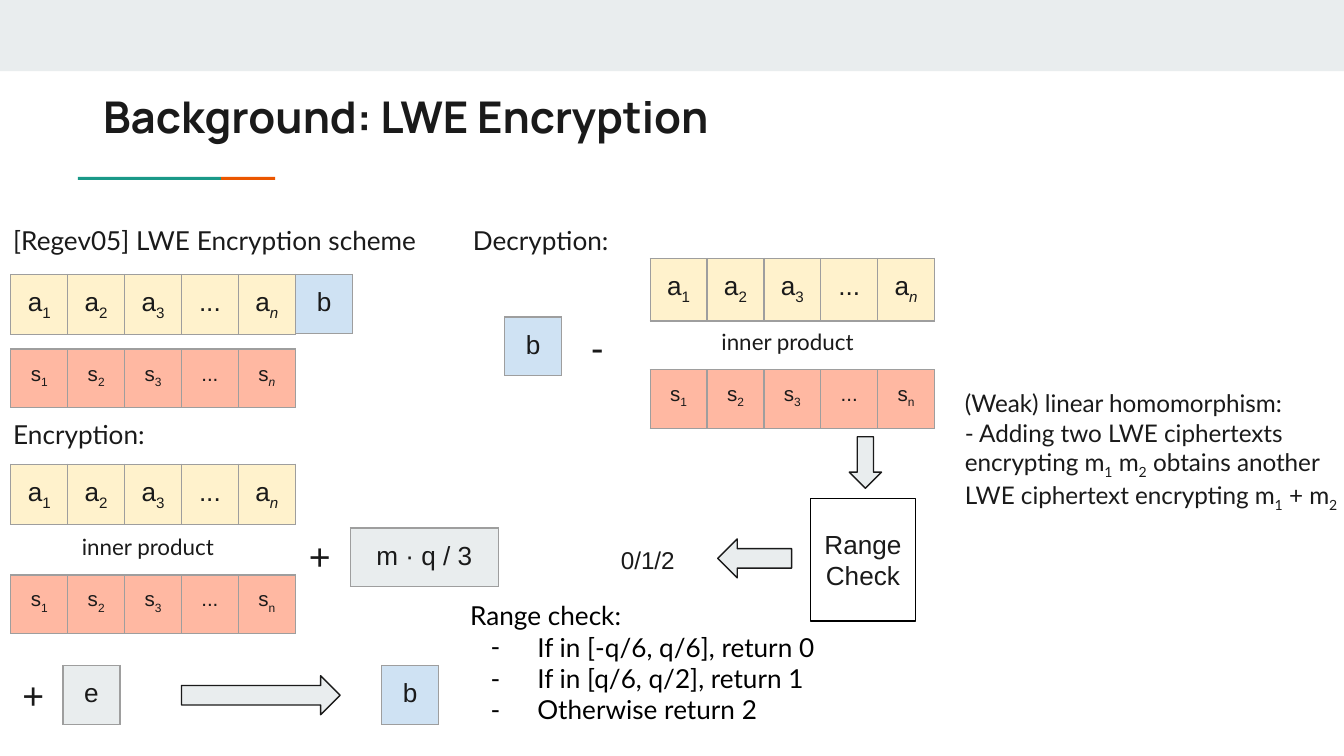
from typing import NamedTuple

from lxml.etree import SubElement
from pptx import Presentation
from pptx.dml.color import RGBColor
from pptx.enum.shapes import MSO_SHAPE as Kind
from pptx.enum.text import MSO_ANCHOR as Anchor, PP_ALIGN as Align
from pptx.oxml.ns import qn
from pptx.util import Pt

INK, GREY, EDGE = "1A1A1A", "E9EDEE", "9E9E9E"
CREAM, ROSE, BLUE = "FFF2CC", "FFB8A2", "CFE2F3"
CELL, INSET = 30.5, 7.2


class Grid(NamedTuple):
    left: float
    top: float
    words: list[str]
    fill: str
    size: float = 14
    slant: bool = False
    width: float = CELL
    height: float = 31.5


class Note(NamedTuple):
    left: float
    top: float
    width: float
    height: float
    lines: list[str]
    size: float = 14
    font: str = "Lato"
    ink: str = INK
    bold: bool = False


class Form(NamedTuple):
    kind: Kind
    left: float
    top: float
    width: float
    height: float
    fill: str = ""
    line: str = ""
    lines: tuple[str, ...] = ()
    size: float = 14


def tint(code: str) -> RGBColor:
    return RGBColor.from_string(code)


def write(para, text: str, size: float, font: str, ink: str,
          bold: bool = False, slant: bool = False) -> None:
    """Fill a paragraph, lowering every second part between underscores."""
    head, *rest = text.split("_")
    para.text = head
    for part in rest:
        para.add_run().text = part
    for i, run in enumerate(para.runs):
        run.font.size = Pt(size)
        run.font.name = font
        run.font.bold = bold
        run.font.color.rgb = tint(ink)
        if i % 2:
            run.font._element.set("baseline", "-25000")
            run.font.italic = slant and run.text == "n"


def pad(frame) -> None:
    frame.word_wrap = True
    frame.margin_left = frame.margin_right = Pt(INSET)
    frame.margin_top = frame.margin_bottom = Pt(INSET)


def frame_cell(cell) -> None:
    props = cell._tc.get_or_add_tcPr()
    for i, side in enumerate(("lnL", "lnR", "lnT", "lnB")):
        line = props.makeelement(qn(f"a:{side}"), {"w": str(Pt(0.75))})
        fill = SubElement(line, qn("a:solidFill"))
        SubElement(fill, qn("a:srgbClr"), val=EDGE)
        props.insert(i, line)


def add_grid(slide, grid: Grid) -> None:
    count = len(grid.words)
    table = slide.shapes.add_table(
        1, count, Pt(grid.left), Pt(grid.top),
        Pt(grid.width * count), Pt(grid.height)).table
    table.first_row = table.horz_banding = False
    for i, word in enumerate(grid.words):
        table.columns[i].width = Pt(grid.width)
        cell = table.cell(0, i)
        cell.fill.solid()
        cell.fill.fore_color.rgb = tint(grid.fill)
        cell.margin_left = cell.margin_right = Pt(INSET)
        cell.margin_top = cell.margin_bottom = Pt(INSET)
        para = cell.text_frame.paragraphs[0]
        para.alignment = Align.CENTER
        write(para, word, grid.size, "Arial", INK, slant=grid.slant)
        frame_cell(cell)


def add_note(slide, note: Note) -> None:
    box = slide.shapes.add_textbox(
        Pt(note.left), Pt(note.top), Pt(note.width), Pt(note.height))
    frame = box.text_frame
    pad(frame)
    frame.text = "\n".join(note.lines)
    for para, line in zip(frame.paragraphs, note.lines):
        dash = line.startswith("• ")
        write(para, line.removeprefix("• "), note.size, note.font,
              note.ink, note.bold)
        if dash:
            props = para._p.get_or_add_pPr()
            props.set("marL", str(Pt(36)))
            props.set("indent", str(Pt(-25)))
            SubElement(props, qn("a:buFont"), typeface="Lato")
            SubElement(props, qn("a:buChar"), char="-")


def add_form(slide, form: Form) -> None:
    shape = slide.shapes.add_shape(
        form.kind, Pt(form.left), Pt(form.top), Pt(form.width), Pt(form.height))
    shape.shadow.inherit = False
    if form.fill:
        shape.fill.solid()
        shape.fill.fore_color.rgb = tint(form.fill)
    else:
        shape.fill.background()
    if form.line:
        shape.line.color.rgb = tint(form.line)
        shape.line.width = Pt(0.75)
    else:
        shape.line.fill.background()
    if form.lines:
        frame = shape.text_frame
        pad(frame)
        frame.vertical_anchor = Anchor.MIDDLE
        frame.text = "\n".join(form.lines)
        for para, line in zip(frame.paragraphs, form.lines):
            para.alignment = Align.CENTER
            write(para, line, form.size, "Arial", INK)


def row(name: str) -> list[str]:
    return [f"{name}_1", f"{name}_2", f"{name}_3", "...", f"{name}_n"]


GRIDS = [
    Grid(5.8, 308, row("s"), ROSE, 11),
    Grid(187.7, 282.8, ["m · q / 3"], GREY, width=79.3),
    Grid(5.8, 147, row("a"), CREAM, slant=True),
    Grid(158.4, 147, ["b"], BLUE),
    Grid(5.8, 187, row("s"), ROSE, 11, True),
    Grid(5.8, 248.7, row("a"), CREAM, slant=True),
    Grid(348.3, 198, row("s"), ROSE, 11),
    Grid(270.4, 169.8, ["b"], BLUE),
    Grid(348.3, 138.5, row("a"), CREAM, slant=True, height=33.5),
    Grid(33.8, 356.5, ["e"], GREY),
    Grid(204.5, 356.5, ["b"], BLUE),
]
NOTES = [
    Note(48.2, 41, 605.5, 42.5, ["Background: LWE Encryption"], 23.4, "Manrope", bold=True),
    Note(0, 113, 243, 32, ["[Regev05] LWE Encryption scheme"]),
    Note(0, 217, 243, 32, ["Encryption:"]),
    Note(246.2, 113, 243, 32, ["Decryption:"]),
    Note(36.7, 278.6, 109, 29, ["inner product"], 12),
    Note(379.4, 168.5, 109, 29, ["inner product"], 12),
    Note(158.4, 278.6, 30, 39, ["+"], 20, "Arial"),
    Note(309.6, 166.3, 30, 39, ["-"], 20, "Arial"),
    Note(5, 352.8, 30, 39, ["+"], 20, "Arial"),
    Note(244.8, 314, 269, 76, [
        "Range check:", "• If in [-q/6, q/6], return 0",
        "• If in [q/6, q/2], return 1", "• Otherwise return 2"], ink="000000"),
    Note(509.8, 201, 214, 78, [
        "(Weak) linear homomorphism:",
        "- Adding two LWE ciphertexts encrypting m_1_ m_2_ obtains another "
        "LWE ciphertext encrypting m_1_ + m_2"], 13),
]
FORMS = [
    Form(Kind.RECTANGLE, 0, 0, 720, 38.2, GREY),
    Form(Kind.RECTANGLE, 41.8, 94.8, 76.6, 1.6, "1A9988"),
    Form(Kind.RECTANGLE, 118.4, 94.8, 29, 1.6, "EB5600"),
    Form(Kind.RECTANGLE, 434.2, 267, 56.2, 65.7, line="000000", lines=("Range", "Check")),
    Form(Kind.DOWN_ARROW, 455, 234, 17.3, 27.6, GREY, INK),
    Form(Kind.RIGHT_ARROW, 97.2, 362, 85, 20.9, GREY, INK),
    Form(Kind.LEFT_ARROW, 384.5, 288.7, 39.6, 20.9, GREY, INK),
    Form(Kind.OVAL, 309.6, 279.4, 74.9, 41, lines=("0/1/2",), size=13),
]


def main() -> None:
    deck = Presentation()
    deck.slide_width, deck.slide_height = Pt(720), Pt(405)
    slide = deck.slides.add_slide(deck.slide_layouts[6])
    for form in FORMS:
        add_form(slide, form)
    for grid in GRIDS:
        add_grid(slide, grid)
    for note in NOTES:
        add_note(slide, note)
    deck.save("out.pptx")


if __name__ == "__main__":
    main()
